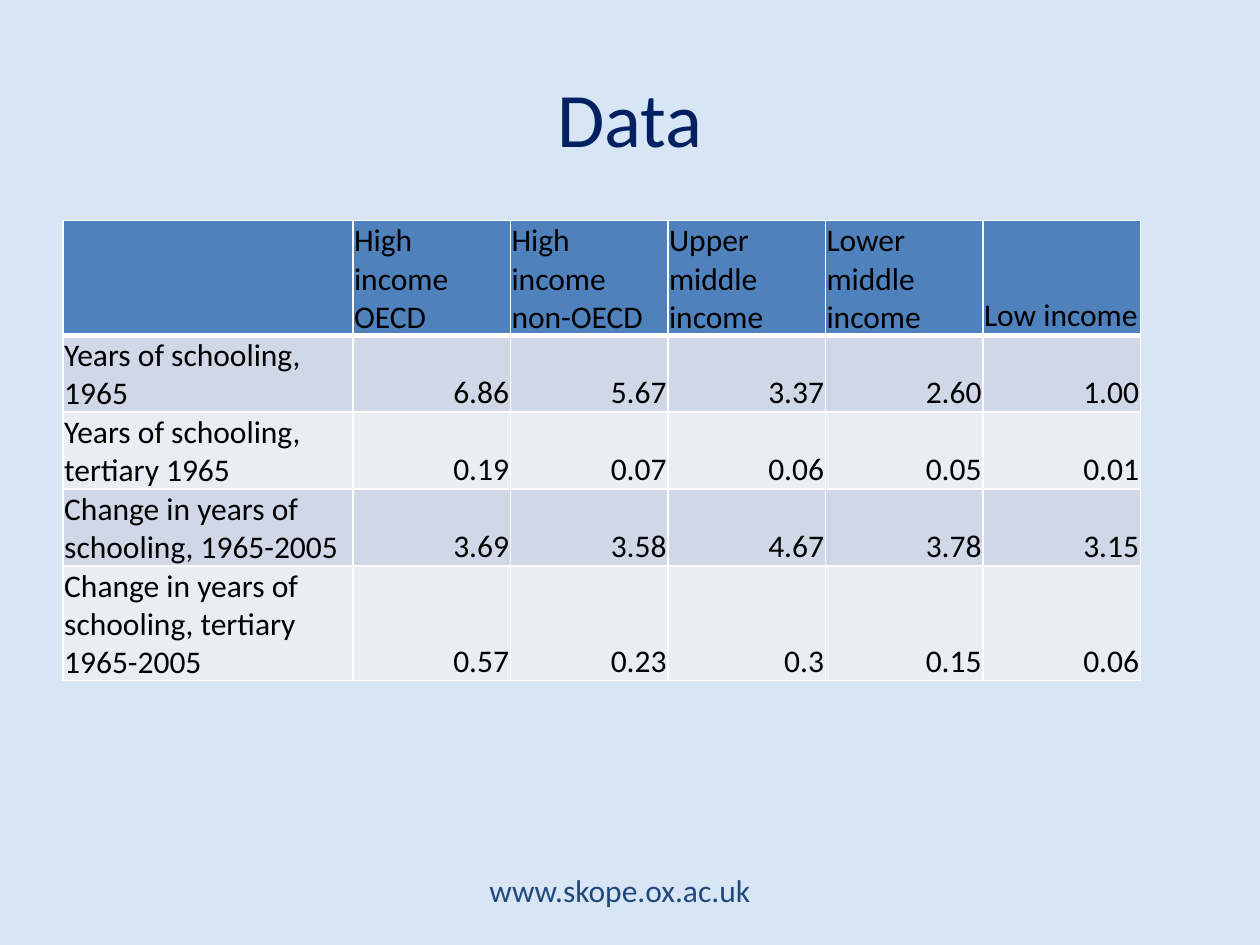
from typing import NamedTuple

from lxml import etree
from pptx import Presentation
from pptx import util as u
from pptx.dml.color import RGBColor
from pptx.enum import text
from pptx.oxml.ns import qn

BACKGROUND = RGBColor(0xD7, 0xE5, 0xF5)
NAVY = RGBColor(0x00, 0x20, 0x60)
FOOTER_BLUE = RGBColor(0x1F, 0x49, 0x7D)
HEADER_BLUE = RGBColor(0x4F, 0x81, 0xBD)
BANDS = (RGBColor(0xD0, 0xD8, 0xE8), RGBColor(0xE9, 0xED, 0xF4))
BLACK = RGBColor(0x00, 0x00, 0x00)
WHITE = RGBColor(0xFF, 0xFF, 0xFF)
FONT = "Calibri"
LABEL_WIDTH, VALUE_WIDTH, ROW_HEIGHT = 2.3, 1.25, 0.41
TABLE_HEIGHT = u.Inches(3.65)


class Measure(NamedTuple):
    label: str
    values: tuple[str, ...]


INCOME_GROUPS = (
    "High income OECD",
    "High income non-OECD",
    "Upper middle income",
    "Lower middle income",
    "Low income",
)
MEASURES = (
    Measure("Years of schooling, 1965", ("6.86", "5.67", "3.37", "2.60", "1.00")),
    Measure("Years of schooling, tertiary 1965", ("0.19", "0.07", "0.06", "0.05", "0.01")),
    Measure("Change in years of schooling, 1965-2005", ("3.69", "3.58", "4.67", "3.78", "3.15")),
    Measure("Change in years of schooling, tertiary 1965-2005", ("0.57", "0.23", "0.3", "0.15", "0.06")),
)


def write(paragraph, words: str, size: int, color: RGBColor, align: text.PP_ALIGN) -> None:
    paragraph.alignment = align
    run = paragraph.add_run()
    run.text = words
    run.font.name = FONT
    run.font.size = u.Pt(size)
    run.font.bold = False
    run.font.color.rgb = color


def add_borders(cell, top: int, bottom: int) -> None:
    """Draw white cell borders; must run before the fill is set."""
    properties = cell._tc.get_or_add_tcPr()
    for side, points in (("L", 1), ("R", 1), ("T", top), ("B", bottom)):
        line = etree.SubElement(properties, qn(f"a:ln{side}"), w=str(u.Pt(points)))
        fill = etree.SubElement(line, qn("a:solidFill"))
        etree.SubElement(fill, qn("a:srgbClr"), val=str(WHITE))


def fill_cell(cell, words: str, row: int, column: int) -> None:
    add_borders(cell, top=3 if row == 1 else 1, bottom=3 if row == 0 else 1)
    cell.fill.solid()
    cell.fill.fore_color.rgb = BANDS[(row - 1) % 2] if row else HEADER_BLUE
    if not words:
        return
    cell.vertical_anchor = text.MSO_ANCHOR.BOTTOM
    cell.margin_left = cell.margin_right = cell.margin_top = u.Inches(0.01)
    cell.margin_bottom = 0
    is_value = row > 0 and column > 0
    align = text.PP_ALIGN.RIGHT if is_value else text.PP_ALIGN.LEFT
    write(cell.text_frame.paragraphs[0], words, 18, BLACK, align)


def add_schooling_table(slide) -> None:
    rows = [("", *INCOME_GROUPS)] + [(m.label, *m.values) for m in MEASURES]
    widths = [LABEL_WIDTH] + [VALUE_WIDTH] * len(INCOME_GROUPS)
    frame = slide.shapes.add_table(
        len(rows), len(widths), u.Inches(0.5), u.Inches(1.75),
        u.Inches(sum(widths)), TABLE_HEIGHT,
    )
    table = frame.table
    for column, width in zip(table.columns, widths):
        column.width = u.Inches(width)
    for r, row in enumerate(rows):
        table.rows[r].height = u.Inches(ROW_HEIGHT)
        for c, words in enumerate(row):
            fill_cell(table.cell(r, c), words, r, c)
    frame.height = TABLE_HEIGHT  # rows grow to fit their wrapped text


def add_footer(slide) -> None:
    footer = slide.shapes.add_textbox(
        u.Inches(3.2), u.Inches(6.86), u.Inches(3.44), u.Inches(0.4)
    ).text_frame
    footer.word_wrap = True
    footer.auto_size = text.MSO_AUTO_SIZE.SHAPE_TO_FIT_TEXT
    footer.vertical_anchor = text.MSO_ANCHOR.MIDDLE
    write(footer.paragraphs[0], "www.skope.ox.ac.uk", 18, FOOTER_BLUE, text.PP_ALIGN.CENTER)


def add_title(slide) -> None:
    title = slide.shapes.title
    title.left, title.top = u.Inches(0.5), u.Inches(0.3)
    title.width, title.height = u.Inches(9), u.Inches(1.25)
    title.text_frame.vertical_anchor = text.MSO_ANCHOR.MIDDLE
    write(title.text_frame.paragraphs[0], "Data", 44, NAVY, text.PP_ALIGN.CENTER)


def main() -> None:
    deck = Presentation()
    deck.slide_width, deck.slide_height = u.Inches(10), u.Inches(7.5)
    slide = deck.slides.add_slide(deck.slide_layouts.get_by_name("Title Only"))
    slide.background.fill.solid()
    slide.background.fill.fore_color.rgb = BACKGROUND
    add_footer(slide)
    add_title(slide)
    add_schooling_table(slide)
    deck.save("out.pptx")


if __name__ == "__main__":
    main()
